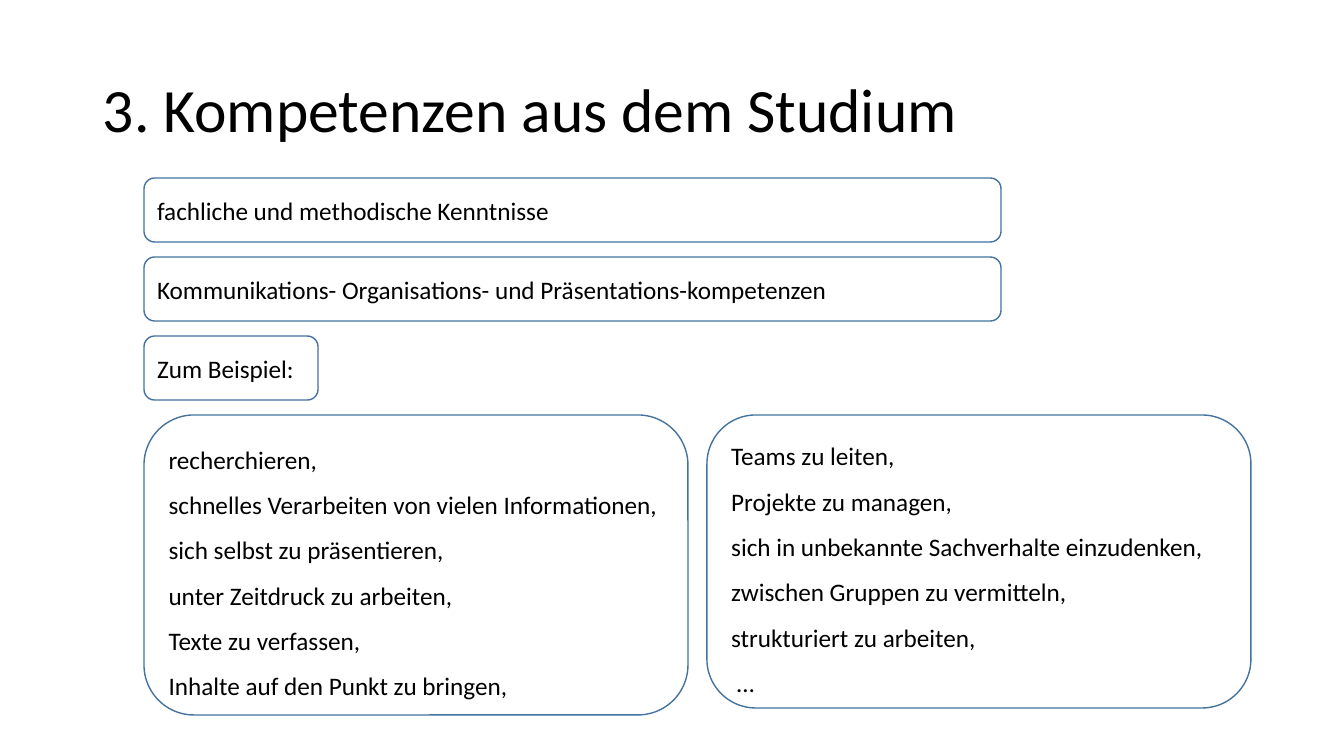
from pptx import Presentation
from pptx.dml.color import RGBColor
from pptx.enum.shapes import MSO_SHAPE
from pptx.enum.text import MSO_ANCHOR, PP_ALIGN
from pptx.util import Pt

ROUND = MSO_SHAPE.ROUNDED_RECTANGLE
MIDDLE = MSO_ANCHOR.MIDDLE
LEFT = PP_ALIGN.LEFT

TITLE = "3. Kompetenzen aus dem Studium"
ROWS = [
    ("fachliche und methodische Kenntnisse", 857),
    ("Kommunikations- Organisations- und Präsentations-kompetenzen", 857),
    ("Zum Beispiel:", 174),
]
LISTS = [
    ([
        "recherchieren,",
        "schnelles Verarbeiten von vielen Informationen,",
        "sich selbst zu präsentieren,",
        "unter Zeitdruck zu arbeiten,",
        "Texte zu verfassen,",
        "Inhalte auf den Punkt zu bringen,",
    ], 300),
    ([
        "Teams zu leiten,",
        "Projekte zu managen,",
        "sich in unbekannte Sachverhalte einzudenken, zwischen Gruppen zu vermitteln,",
        "strukturiert zu arbeiten,",
        " …",
    ], 293),
]

THEME = {
    "font": "Calibri",
    "ink": RGBColor(0, 0, 0),
    "fill": RGBColor(255, 255, 255),
    "line": RGBColor(0x43, 0x73, 0x9E),
    "title": Pt(44),
    "body": Pt(18),
    "stroke": Pt(1),
}
PX = 914400 / 100.8
WIDE, HIGH = 1344, 756
EDGE, TOP = 144, 178
ROW, STEP = 64, 79
LIST, PITCH = 544, 563


def px(*nums):
    return [round(n * PX) for n in nums]


def apply(item, **vals):
    for name, val in vals.items():
        setattr(item, name, val)


def write(shape, lines, size, space):
    frame = shape.text_frame
    apply(frame, text="\n".join(lines), word_wrap=True, vertical_anchor=MIDDLE)
    for para in frame.paragraphs:
        apply(para, alignment=LEFT, line_spacing=space)
        for run in para.runs:
            apply(run.font, name=THEME["font"], size=size)
            run.font.color.rgb = THEME["ink"]


def box(slide, rect, lines, space):
    shape = slide.shapes.add_shape(ROUND, *px(*rect))
    shape.shadow.inherit = False
    shape.fill.solid()
    shape.fill.fore_color.rgb = THEME["fill"]
    shape.line.color.rgb = THEME["line"]
    shape.line.width = THEME["stroke"]
    write(shape, lines, THEME["body"], space)


def main():
    deck = Presentation()
    deck.slide_width, deck.slide_height = px(WIDE, HIGH)
    slide = deck.slides.add_slide(deck.slide_layouts[6])
    head = slide.shapes.add_textbox(*px(93, 40, 1159, 146))
    write(head, [TITLE], THEME["title"], 0.9)
    for i, (text, width) in enumerate(ROWS):
        box(slide, (EDGE, TOP + i * STEP, width, ROW), [text], 1.0)
    base = TOP + len(ROWS) * STEP
    for i, (lines, height) in enumerate(LISTS):
        box(slide, (EDGE + i * PITCH, base, LIST, height), lines, 1.5)
    deck.save("out.pptx")


if __name__ == "__main__":
    main()
